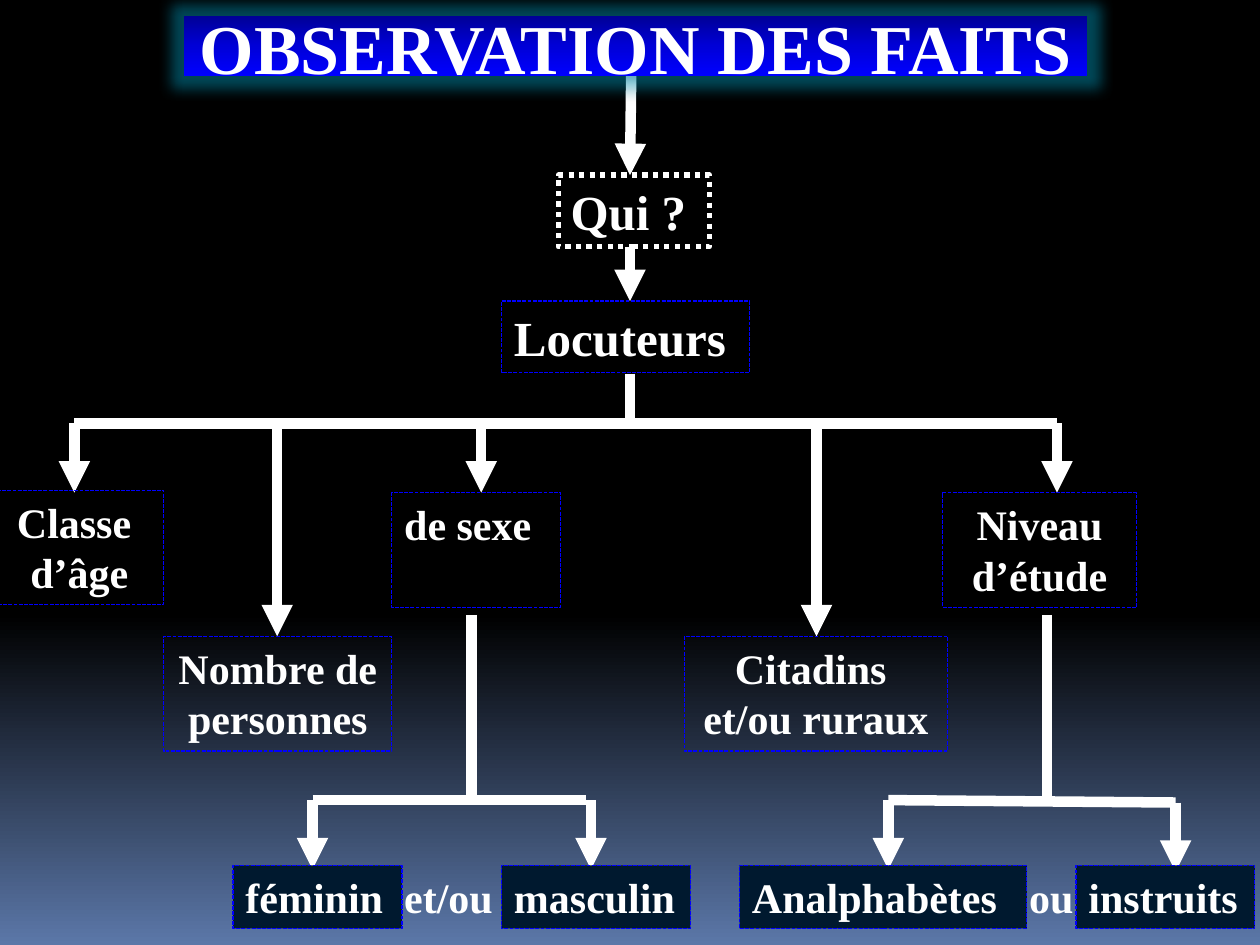
from copy import deepcopy

from lxml.etree import SubElement, fromstring
from pptx import Presentation
from pptx.dml.color import RGBColor
from pptx.enum.dml import MSO_LINE
from pptx.enum.shapes import MSO_CONNECTOR, MSO_SHAPE
from pptx.enum.text import MSO_ANCHOR, MSO_AUTO_SIZE, PP_ALIGN
from pptx.oxml.ns import qn
from pptx.util import Pt

THEME = {
    "font": "Times New Roman",
    "text": RGBColor.from_string("FFFFFF"),
    "arrow": RGBColor.from_string("FFFFFF"),
    "border": RGBColor.from_string("0000FF"),
    "leaf": RGBColor.from_string("00192F"),
    "backdrop": [(0, "000000"), (0.65, "000000"), (1, "5B77A8")],
    "banner": [(0, "000097"), (0.5, "0000D7"), (1, "0000FF")],
    "title_size": 40, "question_size": 28, "branch_size": 24,
    "arrow_width": 6,
}
BANNER_EFFECTS = (
    '<a:effectLst xmlns:a="http://schemas.openxmlformats.org/drawingml/2006/main">'
    '<a:glow rad="190500"><a:srgbClr val="00B0D8"><a:alpha val="40000"/></a:srgbClr></a:glow>'
    '<a:outerShdw blurRad="44450" dist="27940" dir="5400000">'
    '<a:srgbClr val="000000"><a:alpha val="32000"/></a:srgbClr></a:outerShdw>'
    '</a:effectLst>')


def set_gradient(fill, stops):
    """Fill from top to bottom with three colour stops."""
    fill.gradient()
    fill.gradient_angle = 270
    first = fill.gradient_stops[0]._gs
    first.addnext(deepcopy(first))
    for stop, (position, color) in zip(fill.gradient_stops, stops):
        stop.position = position
        stop.color.rgb = RGBColor.from_string(color)


def write_text(frame, text, size, align, anchor=MSO_ANCHOR.TOP, wrap=True):
    layout = {"auto_size": MSO_AUTO_SIZE.NONE, "word_wrap": wrap,
              "vertical_anchor": anchor}
    for key, value in layout.items():
        setattr(frame, key, value)
    frame.text = text
    for paragraph in frame.paragraphs:
        paragraph.alignment = align
        font = paragraph.runs[0].font
        for key, value in {"name": THEME["font"], "size": Pt(size), "bold": True}.items():
            setattr(font, key, value)
        font.color.rgb = THEME["text"]


deck = Presentation()
deck.slide_width, deck.slide_height = Pt(720), Pt(540)
slide = deck.slides.add_slide(deck.slide_layouts[5])
shapes = slide.shapes
set_gradient(slide.background.fill, THEME["backdrop"])

# Levels of the tree
trunk_x = 360
bar_y, upper_y, lower_y = 242, 281.5, 363.6
stem_y, fork_y, leaf_y = 351.4, 457.2, 494.6
fork_tip_y = 496.8

# Plain lines: trunk, bars and stems
plain_lines = [
    (trunk_x, 213.5, trunk_x, 239),
    (42.5, bar_y, 604, bar_y),
    (269.3, stem_y, 269.3, fork_y),
    (178.6, fork_y, 334.8, fork_y),
    (598.3, stem_y, 598.3, fork_y),
    (507.6, fork_y, 671.8, 458.6),
]
# Arrows: trunk, branches and leaves
arrows = [(360.7, 43.2, trunk_x, 100.1), (trunk_x, 141.1, trunk_x, 172.1)]
arrows += [(x, bar_y, x, tip) for x, tip in [
    (42.5, upper_y), (158.4, lower_y), (275, upper_y),
    (466.6, lower_y), (604, upper_y)]]
arrows += [(x, fork_y, x, fork_tip_y) for x in (178.6, 337.7, 507.6)]
arrows.append((671.8, 458.6, 671.8, 498.2))

for points, pointed in [(p, False) for p in plain_lines] + [(p, True) for p in arrows]:
    link = shapes.add_connector(MSO_CONNECTOR.STRAIGHT, *map(Pt, points))
    link.line.color.rgb = THEME["arrow"]
    link.line.width = Pt(THEME["arrow_width"])
    if pointed:
        SubElement(link.line._get_or_add_ln(), qn("a:tailEnd"), type="triangle")
    SubElement(link._element.spPr, qn("a:effectLst"))

# Boxes: text, left, top, width, height, size, alignment, fill
left, center = PP_ALIGN.LEFT, PP_ALIGN.CENTER
question, branch, leaf = THEME["question_size"], THEME["branch_size"], THEME["leaf"]
boxes = [
    ("Qui ?", 319, 100.1, 86.4, 41, question, left, None),
    ("Locuteurs", 286.6, 172.1, 141.8, 41, question, left, None),
]
boxes += [(text, x, y, width, 65.5, branch, align, None) for text, x, y, width, align in [
    ("Classe \nd’âge", -2.9, 280.1, 96.5, center),
    ("Nombre de personnes", 93.6, lower_y, 130.3, center),
    ("de sexe", 223.9, upper_y, 96.5, left),
    ("Citadins \net/ou ruraux", 391, lower_y, 150.5, center),
    ("Niveau\nd’étude", 538.6, upper_y, 110.9, center),
]]
boxes += [(text, x, leaf_y, width, 36, branch, left, leaf) for text, x, width in [
    ("féminin", 133.2, 96.5),
    ("masculin", 286.6, 108),
    ("Analphabètes", 422.6, 164.2),
    ("instruits", 614.9, 102.2),
]]
for text, x, y, width, height, size, align, color in boxes:
    box = shapes.add_shape(MSO_SHAPE.RECTANGLE, Pt(x), Pt(y), Pt(width), Pt(height))
    box.shadow.inherit = False
    if color is None:
        box.fill.background()
    else:
        box.fill.solid()
        box.fill.fore_color.rgb = color
    asked = text == "Qui ?"
    box.line.color.rgb = THEME["arrow"] if asked else THEME["border"]
    box.line.width = Pt(3 if asked else 0.75)
    box.line.dash_style = MSO_LINE.ROUND_DOT if asked else MSO_LINE.SQUARE_DOT
    # ROUND_DOT is sysDot, SQUARE_DOT is sysDash
    write_text(box.text_frame, text, size, align)

# Conjunctions between the leaves
for text, x, width in [("et/ou", 223.9, 67.7), ("ou", 581, 43.9)]:
    conjunction = shapes.add_textbox(Pt(x), Pt(leaf_y), Pt(width), Pt(36))
    write_text(conjunction.text_frame, text, branch, left)

# Title banner, glowing over the first arrow
title = shapes.title
for key, value in {"left": 105.1, "top": 9.4, "width": 516.2, "height": 33.8}.items():
    setattr(title, key, Pt(value))
set_gradient(title.fill, THEME["banner"])
title._element.spPr.append(fromstring(BANNER_EFFECTS))
write_text(title.text_frame, "OBSERVATION DES FAITS", THEME["title_size"], center,
           MSO_ANCHOR.MIDDLE, wrap=False)
shapes._spTree.append(title._element)

deck.save("out.pptx")
